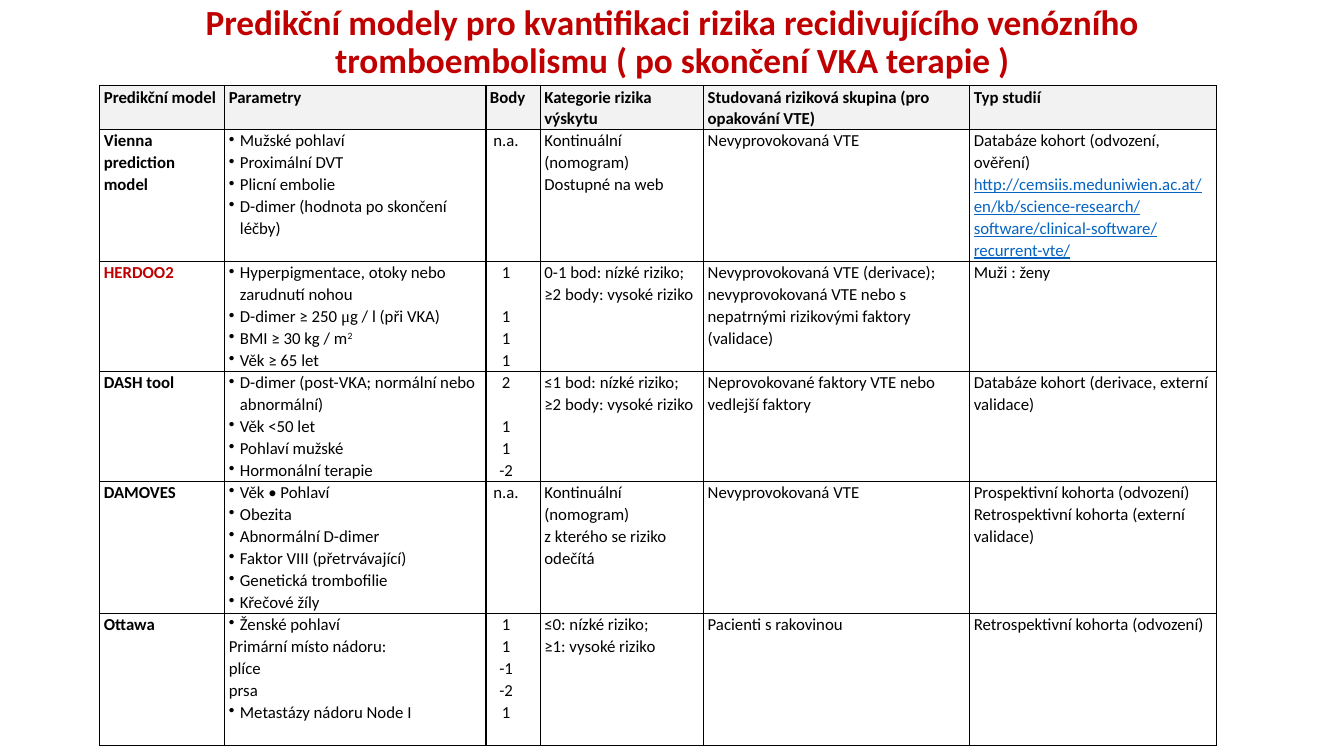
from dataclasses import dataclass

from lxml import etree
from pptx import Presentation
from pptx.dml.color import RGBColor
from pptx.enum.text import MSO_ANCHOR, MSO_AUTO_SIZE, PP_ALIGN
from pptx.oxml.ns import qn
from pptx.util import Emu, Inches, Pt

CENTER, LEFT = PP_ALIGN.CENTER, PP_ALIGN.LEFT
MIDDLE = MSO_ANCHOR.MIDDLE
NO_AUTOFIT = MSO_AUTO_SIZE.NONE


@dataclass(frozen=True)
class Theme:
    font: str = "Calibri"
    greek_font: str = "Times New Roman"
    title_size: float = 25.2
    body_size: float = 12
    line_spacing: float = 1.07
    skipped_line: float = 15.7
    text: str = "000000"
    accent: str = "C00000"
    address: str = "0563C1"
    header_fill: str = "F2F2F2"
    border: str = "000000"
    border_width: float = 1


THEME = Theme()

TITLE = ("Predikční modely pro kvantifikaci rizika recidivujícího venózního "
         "tromboembolismu ( po skončení VKA terapie )")
HEADERS = ["Predikční model", "Parametry", "Body", "Kategorie rizika výskytu",
           "Studovaná riziková skupina (pro opakování VTE)", "Typ studií"]

# A line is a string or a tuple of runs; a leading bullet makes it a list item.
# None among the points skips one line.
MODELS = [
    (["Vienna prediction model"],
     ["• Mužské pohlaví", "• Proximální DVT", "• Plicní embolie",
      "• D-dimer (hodnota po skončení léčby)"],
     ["n.a."],
     ["Kontinuální (nomogram)", "Dostupné na web"],
     ["Nevyprovokovaná VTE"],
     ["Databáze kohort (odvození, ověření)",
      "http://cemsiis.meduniwien.ac.at/en/kb/science-research/"
      "software/clinical-software/recurrent-vte/"]),
    (["HERDOO2"],
     ["• Hyperpigmentace, otoky nebo zarudnutí nohou",
      ("• D-dimer ≥ 250 ", ("μ", "greek"), "g / l (při VKA)"),
      ("• BMI ≥ 30 kg / m", ("2", "superscript")),
      "• Věk ≥ 65 let"],
     ["1", None, "1", "1", "1"],
     ["0-1 bod: nízké riziko;", "≥2 body: vysoké riziko"],
     ["Nevyprovokovaná VTE (derivace); nevyprovokovaná VTE nebo s "
      "nepatrnými rizikovými faktory (validace)"],
     ["Muži : ženy"]),
    (["DASH tool"],
     ["• D-dimer (post-VKA; normální nebo abnormální)", "• Věk <50 let",
      "• Pohlaví mužské", "• Hormonální terapie"],
     ["2", None, "1", "1", "-2"],
     ["≤1 bod: nízké riziko;", "≥2 body: vysoké riziko"],
     ["Neprovokované faktory VTE nebo vedlejší faktory"],
     ["Databáze kohort (derivace, externí validace)"]),
    (["DAMOVES"],
     ["• Věk • Pohlaví", "• Obezita", "• Abnormální D-dimer",
      "• Faktor VIII (přetrvávající)", "• Genetická trombofilie",
      "• Křečové žíly"],
     ["n.a."],
     ["Kontinuální (nomogram)", "z kterého se riziko odečítá"],
     ["Nevyprovokovaná VTE"],
     ["Prospektivní kohorta (odvození) Retrospektivní kohorta "
      "(externí validace)"]),
    (["Ottawa"],
     ["• Ženské pohlaví", "Primární místo nádoru:", "plíce", "prsa",
      "• Metastázy nádoru Node I"],
     ["1", "1", "-1", "-2", "1"],
     ["≤0: nízké riziko;", "≥1: vysoké riziko"],
     ["Pacienti s rakovinou"],
     ["Retrospektivní kohorta (odvození)"]),
]
HIGHLIGHTED_MODEL = "HERDOO2"
MODEL_COLUMN, POINTS_COLUMN = 0, 2

SLIDE_SIZE = (13.33, 7.5)
TITLE_BOX = (0.92, 0, 11.5, 0.85)
TABLE_ORIGIN = (0.99, 0.85)
COLUMN_WIDTHS = [1.24, 2.59, 0.54, 1.62, 2.64, 2.45]
ROW_HEIGHTS = [0.43, 1.31, 1.09, 1.09, 1.31, 1.31]
CELL_MARGIN = 0.04
POINTS_RIGHT_MARGIN = 0.18
BULLET_INDENT = 0.11


def style_font(font, size, color, bold=False):
    font.name, font.size, font.bold = THEME.font, Pt(size), bold
    font.color.rgb = RGBColor.from_string(color)


def add_title(slide):
    title = slide.shapes.title
    title.left, title.top, title.width, title.height = map(Inches, TITLE_BOX)
    frame = title.text_frame
    frame.text = TITLE
    frame.word_wrap, frame.auto_size = True, NO_AUTOFIT
    frame.vertical_anchor = MIDDLE
    heading = frame.paragraphs[0]
    heading.alignment, heading.line_spacing = CENTER, 0.9
    style_font(heading.runs[0].font, THEME.title_size, THEME.accent, True)


def add_bullet(paragraph):
    indent = Inches(BULLET_INDENT)
    properties = paragraph._p.get_or_add_pPr()
    properties.set("marL", str(indent))
    properties.set("indent", str(-indent))
    etree.SubElement(properties, qn("a:buChar"), char="•")


def write_line(paragraph, line, color, bold):
    pieces = [piece if isinstance(piece, tuple) else (piece, "")
              for piece in (line if isinstance(line, tuple) else (line,))]
    if pieces[0][0].startswith("• "):
        add_bullet(paragraph)
        pieces[0] = (pieces[0][0][2:], "")
    is_address = pieces[0][0].startswith("http")
    for text, kind in pieces:
        run = paragraph.add_run()
        run.text = text
        style_font(run.font, THEME.body_size,
                   THEME.address if is_address else color, bold)
        if is_address:
            run.font.underline = True
        if kind == "greek":
            run.font.name = THEME.greek_font
        elif kind == "superscript":
            run._r.get_or_add_rPr().set("baseline", "30000")


def fill_cell(cell, lines, color, bold, alignment):
    frame = cell.text_frame
    frame.word_wrap = True
    paragraph, skipped = frame.paragraphs[0], False
    for number, line in enumerate(lines):
        if line is None:
            skipped = True
            continue
        if number:
            paragraph = frame.add_paragraph()
        paragraph.alignment = alignment
        paragraph.line_spacing = THEME.line_spacing
        if skipped:
            paragraph.space_before = Pt(THEME.skipped_line)
            skipped = False
        write_line(paragraph, line, color, bold)


def add_borders(cell):
    properties = cell._tc.get_or_add_tcPr()
    for side in ("a:lnL", "a:lnR", "a:lnT", "a:lnB"):
        border = etree.SubElement(properties, qn(side),
                                  w=str(Pt(THEME.border_width)))
        fill = etree.SubElement(border, qn("a:solidFill"))
        etree.SubElement(fill, qn("a:srgbClr"), val=THEME.border)


def add_models_table(slide):
    rows = [[[header] for header in HEADERS]] + MODELS
    left, top = map(Inches, TABLE_ORIGIN)
    table = slide.shapes.add_table(
        len(rows), len(HEADERS), left, top,
        Inches(sum(COLUMN_WIDTHS)), Inches(sum(ROW_HEIGHTS))).table
    table.first_row = table.horz_banding = False
    for column, width in zip(table.columns, COLUMN_WIDTHS):
        column.width = Inches(width)
    for row, height in zip(table.rows, ROW_HEIGHTS):
        row.height = Inches(height)

    for r, row in enumerate(rows):
        for c, lines in enumerate(row):
            cell = table.cell(r, c)
            is_header = r == 0
            is_points = c == POINTS_COLUMN and not is_header
            cell.margin_top = cell.margin_bottom = Emu(0)
            cell.margin_left = Inches(CELL_MARGIN)
            cell.margin_right = Inches(
                POINTS_RIGHT_MARGIN if is_points else CELL_MARGIN)
            add_borders(cell)
            if is_header:
                cell.fill.solid()
                cell.fill.fore_color.rgb = RGBColor.from_string(THEME.header_fill)
            else:
                cell.fill.background()
            color = THEME.accent if lines == [HIGHLIGHTED_MODEL] else THEME.text
            fill_cell(cell, lines, color, is_header or c == MODEL_COLUMN,
                      CENTER if is_points else LEFT)


def main():
    presentation = Presentation()
    presentation.slide_width, presentation.slide_height = map(Inches, SLIDE_SIZE)
    slide = presentation.slides.add_slide(presentation.slide_layouts[5])
    add_title(slide)
    add_models_table(slide)
    presentation.save("out.pptx")


if __name__ == "__main__":
    main()
